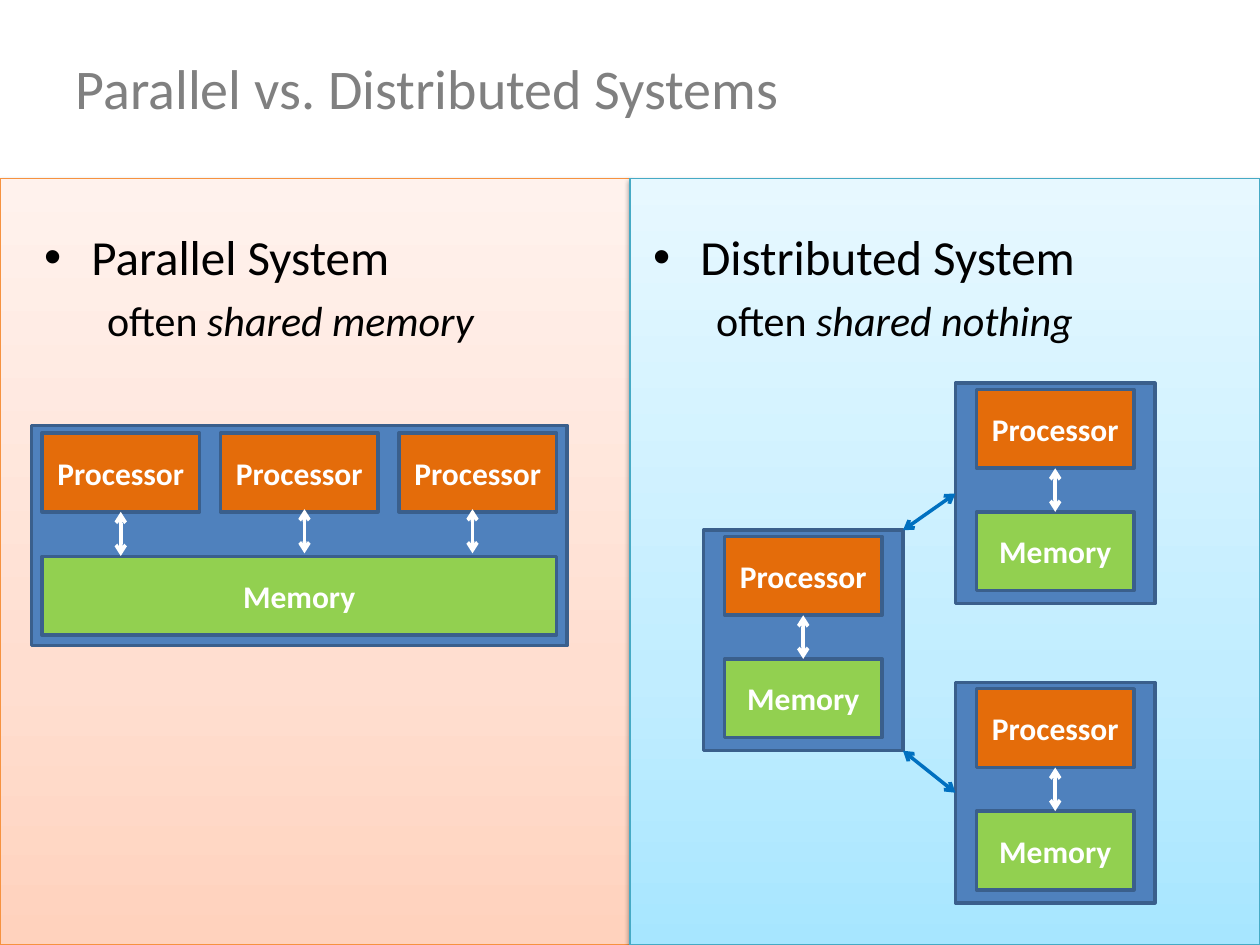
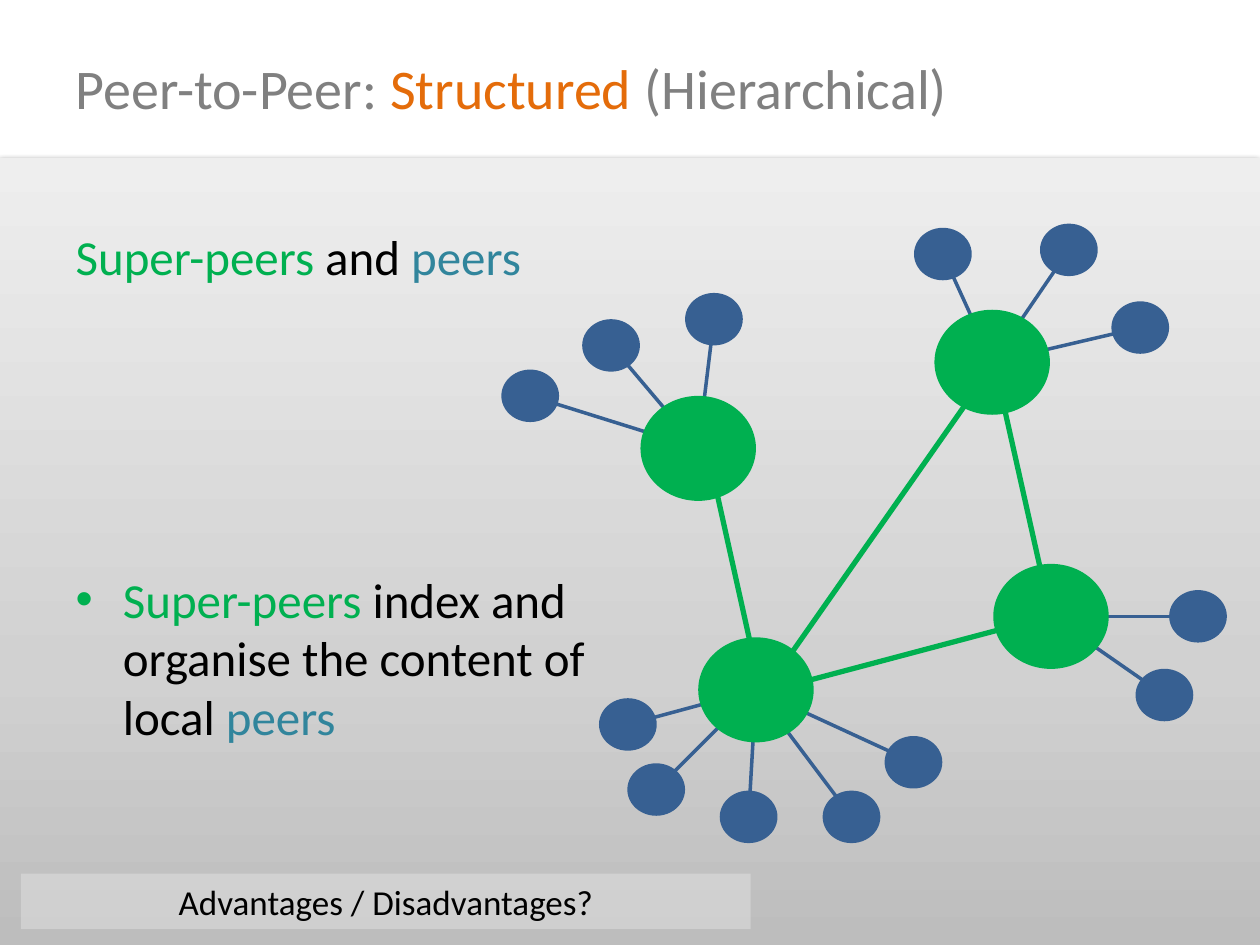
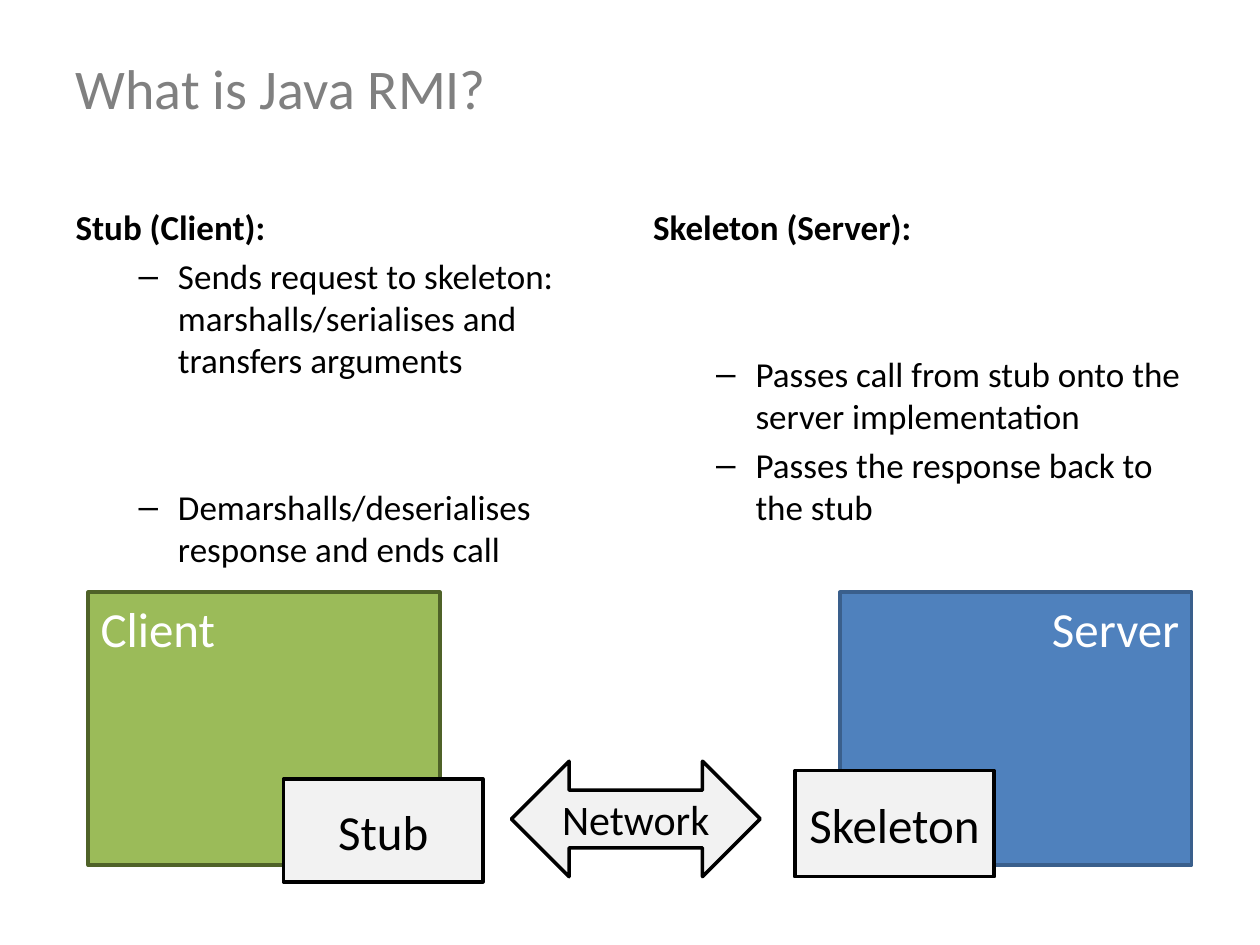
from copy import deepcopy

from lxml import etree
from pptx import Presentation
from pptx.dml.color import RGBColor
from pptx.enum.shapes import MSO_CONNECTOR, MSO_SHAPE
from pptx.enum.text import MSO_ANCHOR, MSO_AUTO_SIZE, PP_ALIGN
from pptx.oxml.ns import qn
from pptx.util import Inches, Pt

RECT, OVAL, DOUBLE_ARROW = MSO_SHAPE.RECTANGLE, MSO_SHAPE.OVAL, MSO_SHAPE.LEFT_RIGHT_ARROW
STRAIGHT = MSO_CONNECTOR.STRAIGHT
LEFT, CENTER, RIGHT = PP_ALIGN.LEFT, PP_ALIGN.CENTER, PP_ALIGN.RIGHT
TOP, MIDDLE = MSO_ANCHOR.TOP, MSO_ANCHOR.MIDDLE
NO_AUTOFIT = MSO_AUTO_SIZE.NONE

FONT = "Calibri"
BLACK, WHITE, GREY, PALE = "000000", "FFFFFF", "808080", "F2F2F2"
BLUE, BLUE_EDGE, LINK_BLUE, PEER_BLUE = "4F81BD", "3A5F8C", "0070C0", "376092"
ORANGE, LIME, GREEN, TEAL = "E46C0A", "92D050", "00B050", "31859C"
OLIVE, OLIVE_EDGE = "9BBB59", "4F6228"
rgb = RGBColor.from_string

prs = Presentation()
prs.slide_width, prs.slide_height = Inches(10), Inches(7.5)
CELL = prs.slide_width / 120  # the slide is a grid of 120 columns by 90 rows
TITLE_AREA = (6, 3.6, 108, 9.4)
BODY_SIZE = (53, 59.4)


def add_box(slide, area, fill, edge=None, edge_width=2, kind=RECT, text="", size=18,
            color=WHITE, bold=False, align=CENTER, anchor=MIDDLE):
    """Add a filled shape; area is left, top, width, height in grid cells."""
    box = slide.shapes.add_shape(kind, *(int(cells * CELL) for cells in area))
    box.shadow.inherit = False
    box.fill.solid()
    box.fill.fore_color.rgb = rgb(fill)
    if edge:
        box.line.color.rgb = rgb(edge)
        box.line.width = Pt(edge_width)
    else:
        box.line.fill.background()
    if text:
        box.text_frame.vertical_anchor = anchor
        label = box.text_frame.paragraphs[0]
        label.alignment = align
        run = label.add_run()
        run.text = text
        run.font.name, run.font.size, run.font.bold = FONT, Pt(size), bold
        run.font.color.rgb = rgb(color)
    return box


def add_link(slide, start, end, color, width=2, arrows=False):
    link = slide.shapes.add_connector(STRAIGHT, *(int(cells * CELL) for cells in (*start, *end)))
    link.line.color.rgb = rgb(color)
    link.line.width = Pt(width)
    etree.SubElement(link._element.spPr, qn("a:effectLst"))
    if arrows:
        outline = link.line._get_or_add_ln()
        for tip in ("a:headEnd", "a:tailEnd"):
            etree.SubElement(outline, qn(tip), type="arrow")


# Panel: area, gradient colours from bottom to top, edge.
# Body: left, top, paragraphs; paragraph: level, size, own left margin in inches
# (unbulleted) or None, space before in points or None, runs.
# Run: text, colour, bold, italic.
slide_plans = [
    dict(
        layout=3,
        title=[("Parallel vs. Distributed Systems", GREY)],
        panels=[((0, 17, 60, 73), ("FFD2BD", "FFDED0", "FFF2ED"), "F69240"),
                ((60, 17, 60, 73), ("A7E6FF", "C1EDFF", "E7F8FF"), "46AAC5")],
        bodies=[(left, 21, [
            (0, 28, None, None, [(system, BLACK, False, False)]),
            (1, 24, 0.5, None, [("often ", BLACK, False, False), (trait, BLACK, False, True)]),
        ]) for left, system, trait in ((3, "Parallel System", "shared memory"),
                                       (61, "Distributed System", "shared nothing"))],
    ),
    dict(
        layout=1,
        title=[("Peer-to-Peer: ", GREY), ("Structured", ORANGE), (" (Hierarchical)", GREY)],
        panels=[((0, 15, 120, 75), ("BDBDBD", "D1D1D1", "EEEEEE"), None)],
        bodies=[(6, 21, [
            (0, 28, 0, None, [("Super-peers", GREEN, False, False),
                              (" and ", BLACK, False, False),
                              ("peers", TEAL, False, False)]),
            (0, 28, None, 162, [("Super-peers ", GREEN, False, False),
                                ("index and organise the content of local ", BLACK, False, False),
                                ("peers", TEAL, False, False)]),
        ])],
    ),
    dict(
        layout=3,
        title=[("What is Java RMI?", GREY)],
        panels=[],
        bodies=[(left, 19, [(0, 20, 0, None, [(heading, BLACK, True, False)])] + [
            (1, 20, None, gap, [(duty, BLACK, False, False)]) for duty, gap in duties
        ]) for left, heading, duties in (
            (6, "Stub (Client):", (
                ("Sends request to skeleton: marshalls/serialises and transfers arguments", None),
                ("Demarshalls/deserialises response and ends call", 60))),
            (61, "Skeleton (Server):", (
                ("Passes call from stub onto the server implementation", 60),
                ("Passes the response back to the stub", None))),
        )],
    ),
]

slides = []
for plan in slide_plans:
    slide = prs.slides.add_slide(prs.slide_layouts[plan["layout"]])
    slides.append(slide)

    title = slide.shapes.title
    title.left, title.top, title.width, title.height = (int(c * CELL) for c in TITLE_AREA)
    title.text_frame.auto_size = NO_AUTOFIT
    title.text_frame.vertical_anchor = MIDDLE
    heading = title.text_frame.paragraphs[0]
    heading.alignment = LEFT
    for words, color in plan["title"]:
        run = heading.add_run()
        run.text = words
        run.font.name, run.font.size = FONT, Pt(32)
        run.font.color.rgb = rgb(color)

    for depth, (area, colors, edge) in enumerate(plan["panels"]):
        panel = add_box(slide, area, WHITE, edge, 0.75)
        panel.fill.gradient()
        panel.fill.gradient_angle = 90
        stop_list = panel._element.spPr.find(qn("a:gradFill")).find(qn("a:gsLst"))
        stop_list.insert(1, deepcopy(stop_list[0]))
        for stop, color, position in zip(panel.fill.gradient_stops, colors, (0, 0.35, 1)):
            stop.color.rgb = rgb(color)
            stop.position = position
        effects = panel._element.spPr.find(qn("a:effectLst"))
        shadow = etree.SubElement(effects, qn("a:outerShdw"), blurRad="40000", dist="20000",
                                  dir="5400000", rotWithShape="0")
        shade = etree.SubElement(shadow, qn("a:srgbClr"), val=BLACK)
        etree.SubElement(shade, qn("a:alpha"), val="38000")
        slide.shapes._spTree.insert(2 + depth, panel._element)  # behind the placeholders

    for body, (left, top, paragraphs) in zip(list(slide.placeholders)[1:], plan["bodies"]):
        body.left, body.top, body.width, body.height = (
            int(c * CELL) for c in (left, top, *BODY_SIZE))
        frame = body.text_frame
        frame.auto_size = NO_AUTOFIT
        for number, (level, size, margin, gap, runs) in enumerate(paragraphs):
            paragraph = frame.add_paragraph() if number else frame.paragraphs[0]
            paragraph.level = level
            if gap is not None:
                paragraph.space_before = Pt(gap)
            if margin is not None:
                properties = paragraph._p.get_or_add_pPr()
                properties.set("marL", str(Inches(margin)))
                properties.set("indent", "0")
                etree.SubElement(properties, qn("a:buNone"))
            for words, color, bold, italic in runs:
                run = paragraph.add_run()
                run.text = words
                run.font.name, run.font.size = FONT, Pt(size)
                run.font.bold, run.font.italic = bold, italic
                run.font.color.rgb = rgb(color)

systems, peer_network, rmi = slides

# Parallel system: three processors share one memory
UNIT_W, UNIT_H = 15, 7.5
processor = dict(fill=ORANGE, edge=BLUE_EDGE, text="Processor", bold=True)
memory = dict(fill=LIME, edge=BLUE_EDGE, text="Memory", bold=True)
add_box(systems, (3, 40.5, 51, 21), BLUE, BLUE_EDGE)
add_box(systems, (4, 53, 49, UNIT_H), **memory)
for column, (bus_x, bus_top) in enumerate(((11.5, 48.75), (29, 48.5), (45, 48.5))):
    add_box(systems, (4 + 17 * column, 41.25, UNIT_W, UNIT_H), **processor)
    add_link(systems, (bus_x, bus_top), (bus_x, bus_top + 4.2), WHITE, arrows=True)

# Distributed system: every node has its own memory
for left, top in ((91, 36.5), (67, 50.5), (91, 65)):
    add_box(systems, (left, top, 19, 21), BLUE, BLUE_EDGE)
    add_box(systems, (left + 2, top + 0.6, UNIT_W, UNIT_H), **processor)
    add_box(systems, (left + 2, top + 12.25, UNIT_W, UNIT_H), **memory)
    bus_x = left + 2 + UNIT_W / 2
    add_link(systems, (bus_x, top + 8.1), (bus_x, top + 12.25), WHITE, arrows=True)
add_link(systems, (86, 71.5), (91, 75.5), LINK_BLUE, arrows=True)
add_link(systems, (86, 50.5), (91, 47), LINK_BLUE, arrows=True)

# Super-peers by centre, each with the centres of its peers
SUPER_W, SUPER_H = 11, 10
PEER_W, PEER_H = SUPER_W / 2, SUPER_H / 2
clusters = {
    (66.5, 42.7): [(50.5, 37.7), (58.2, 32.9), (68, 30.4)],
    (94.5, 34.5): [(89.8, 24.2), (101.8, 23.8), (108.6, 31.2)],
    (100.1, 58.7): [(114.1, 58.7), (110.9, 66.2)],
    (72, 65.7): [(59.8, 69), (62.5, 75.2), (71.3, 77.8), (81.1, 77.8), (87, 72.6)],
}
super_links = [((68, 45.7), (72, 63.7)), ((100, 58.7), (74, 65.6)),
               ((94.7, 34.6), (100.1, 58.7)), ((94.7, 34.6), (73, 65.6))]
for start, end in super_links:
    add_link(peer_network, start, end, GREEN, 3)
for (hub_x, hub_y), peers in clusters.items():
    for x, y in peers:
        add_link(peer_network, (x, y), (hub_x, hub_y), PEER_BLUE)
        add_box(peer_network, (x - PEER_W / 2, y - PEER_H / 2, PEER_W, PEER_H),
                PEER_BLUE, kind=OVAL)
    add_box(peer_network, (hub_x - SUPER_W / 2, hub_y - SUPER_H / 2, SUPER_W, SUPER_H),
            GREEN, kind=OVAL)
question = add_box(peer_network, (2, 83.2, 69.5, 5.3), "D9D9D9",
                   text="Advantages / Disadvantages?", size=20, color=BLACK)
question_fill = question._element.spPr.find(qn("a:solidFill"))[0]
etree.SubElement(question_fill, qn("a:alpha"), val="67000")

# Remote call: client and server talk through stub and skeleton
HOST_W, HOST_H = 33.5, 26
add_box(rmi, (8.4, 56.4, HOST_W, HOST_H), OLIVE, OLIVE_EDGE, text="Client", size=28,
        align=LEFT, anchor=TOP)
add_box(rmi, (80, 56.4, HOST_W, HOST_H), BLUE, BLUE_EDGE, text="Server", size=28,
        align=RIGHT, anchor=TOP)
for area, kind, name, size in (((27, 74.2, 19, 9.8), RECT, "Stub", 28),
                               ((48.7, 72.5, 23.7, 11), DOUBLE_ARROW, "Network", 24),
                               ((75.7, 73.4, 19, 10.1), RECT, "Skeleton", 28)):
    add_box(rmi, area, PALE, BLACK, kind=kind, text=name, size=size, color=BLACK)

prs.save("out.pptx")
